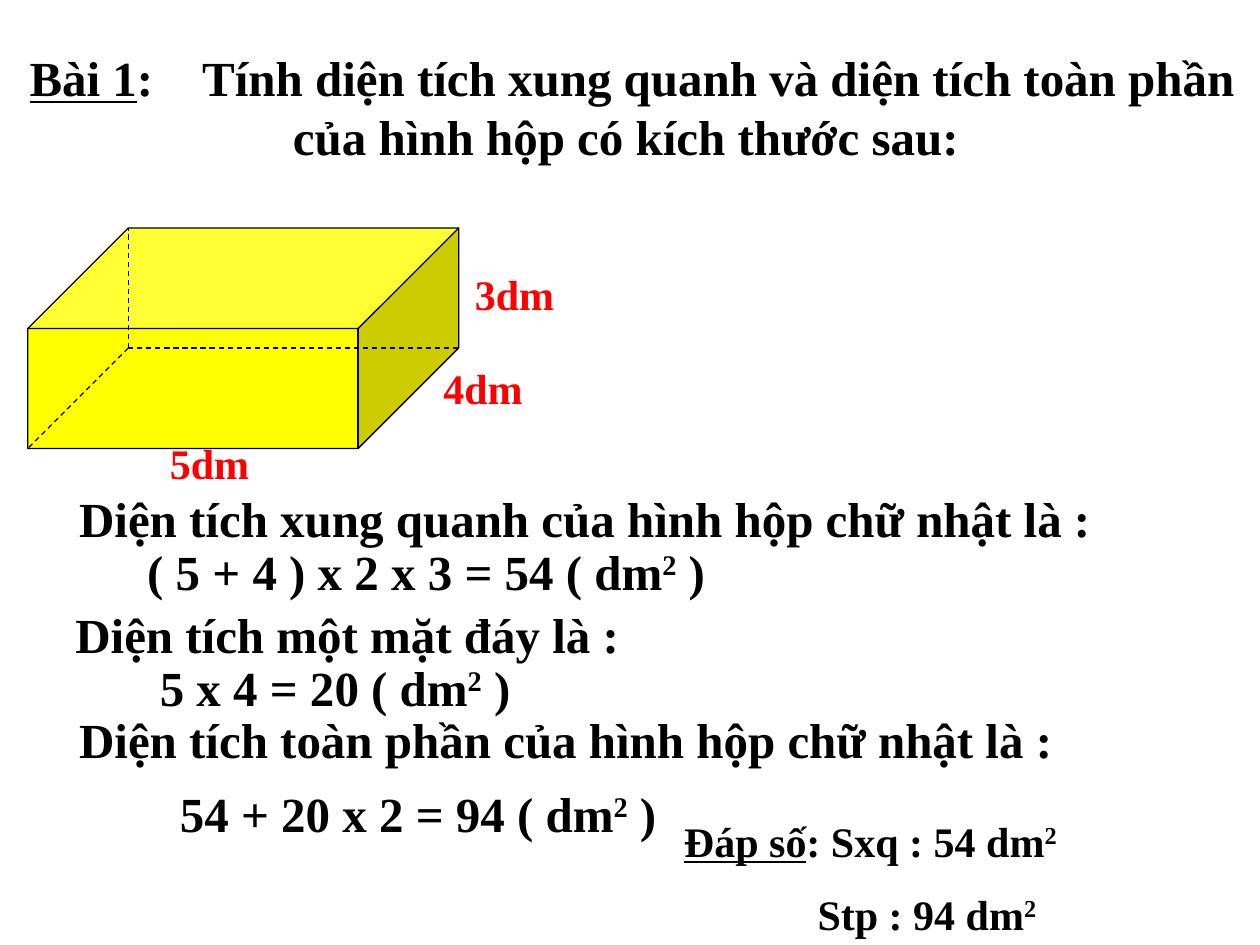
import pptx
import pptx.util
import pptx.dml.color
import pptx.enum.dml
import pptx.enum.shapes
import pptx.enum.text
import pptx.oxml.ns
import lxml.etree

Inches = pptx.util.Inches
Pt = pptx.util.Pt

COLORS = {"ink": "000000", "label": "FF0000", "box": "FFFF00"}
FONT = "Times New Roman"

TITLE = [[("Bài 1", "u"), (":", ""), (" ", "gap"),
          ("Tính diện tích xung quanh và diện tích toàn phần "
           "của hình hộp có kích thước sau: ", "")]]
EDGE_LABELS = [("5dm", 1.25, 3.42), ("4dm", 3.42, 2.83), ("3dm", 3.67, 2.08)]
SOLUTION = [
    ([("Diện tích xung quanh của hình hộp chữ nhật là :", "")], 0.53, 3.83, 9.47),
    ([("( 5 + 4 ) x 2 x 3 = 54 ( dm", ""), ("2", "sup"), (" )", "")], 1.07, 4.25, 5.43),
    ([("Diện tích một mặt đáy là :", "")], 0.5, 4.75, 5.67),
    ([("5 x 4 = 20 ( dm", ""), ("2", "sup"), (" )", "")], 1.17, 5.17, 5.25),
    ([("Diện tích toàn phần của hình hộp chữ nhật là :", "")], 0.53, 5.58, 9.47),
    ([("54 + 20 x 2 = 94 ( dm", ""), ("2", "sup"), (" )", "")], 1.33, 6.17, 7.58),
]
ANSWER = [
    [("Đáp số", "u"), (": Sxq : 54 dm", ""), ("2", "sup")],
    [("Stp : 94 dm", ""), ("2", "sup")],
]
ANSWER_INDENT = 1.06

BOX_X, BOX_Y, BOX_W, BOX_H = 0.22, 1.81, 3.42, 1.75
BOX_DEPTH = 0.456


def rgb(name):
    return pptx.dml.color.RGBColor.from_string(COLORS[name])


def add_text(slide, paragraphs, x, y, w, h, size, color="ink", align=None):
    tf = slide.shapes.add_textbox(Inches(x), Inches(y), Inches(w), Inches(h)).text_frame
    tf.word_wrap = True
    for i, runs in enumerate(paragraphs):
        p = tf.paragraphs[0] if i == 0 else tf.add_paragraph()
        p.alignment = align
        if i > 0:
            p.space_before = Pt(13)
        for text, style in runs:
            r = p.add_run()
            r.text = text
            r.font.name = FONT
            r.font.size = Pt(size)
            r.font.bold = True
            r.font.color.rgb = rgb(color)
            if style == "u":
                r.font.underline = True
            elif style == "sup":
                r.font._element.set("baseline", "30000")
            elif style == "gap":
                r.font._element.set("spc", "2100")
    return tf


def add_hidden_edge(group, start, end):
    line = group.shapes.add_connector(
        pptx.enum.shapes.MSO_CONNECTOR.STRAIGHT, *map(Inches, start + end))
    line.line.color.rgb = rgb("ink")
    line.line.width = Pt(0.75)
    line.line.dash_style = pptx.enum.dml.MSO_LINE.DASH
    lxml.etree.SubElement(line._element.spPr, pptx.oxml.ns.qn("a:effectLst"))


def add_cuboid(slide):
    group = slide.shapes.add_group_shape()
    sp = group.shapes.add_shape(pptx.enum.shapes.MSO_SHAPE.CUBE,
                                *map(Inches, (BOX_X, BOX_Y, BOX_W, BOX_H)))
    sp.adjustments[0] = BOX_DEPTH
    sp.shadow.inherit = False
    sp.fill.solid()
    sp.fill.fore_color.rgb = rgb("box")
    sp.line.color.rgb = rgb("ink")
    sp.line.width = Pt(0.75)
    depth = BOX_DEPTH * BOX_H
    corner = (BOX_X + depth, BOX_Y + BOX_H - depth)
    for end in [(corner[0], BOX_Y), (BOX_X + BOX_W, corner[1]), (BOX_X, BOX_Y + BOX_H)]:
        add_hidden_edge(group, corner, end)


def main():
    prs = pptx.Presentation()
    prs.slide_width, prs.slide_height = Inches(10), Inches(7.5)
    slide = prs.slides.add_slide(prs.slide_layouts[6])

    for text, x, y in EDGE_LABELS:
        add_text(slide, [[(text, "")]], x, y, 1, 0.51, 24, "label")
    add_cuboid(slide)
    for runs, x, y, w in SOLUTION:
        add_text(slide, [runs], x, y, w, 0.57, 28)
    tf = add_text(slide, ANSWER, 5.33, 6.42, 4.08, 1.05, 24)
    tf.paragraphs[1]._p.get_or_add_pPr().set("marL", str(Inches(ANSWER_INDENT)))
    add_text(slide, TITLE, 0.03, 0.33, 9.97, 1.04, 28,
             align=pptx.enum.text.PP_ALIGN.CENTER)

    prs.save("out.pptx")


if __name__ == "__main__":
    main()
